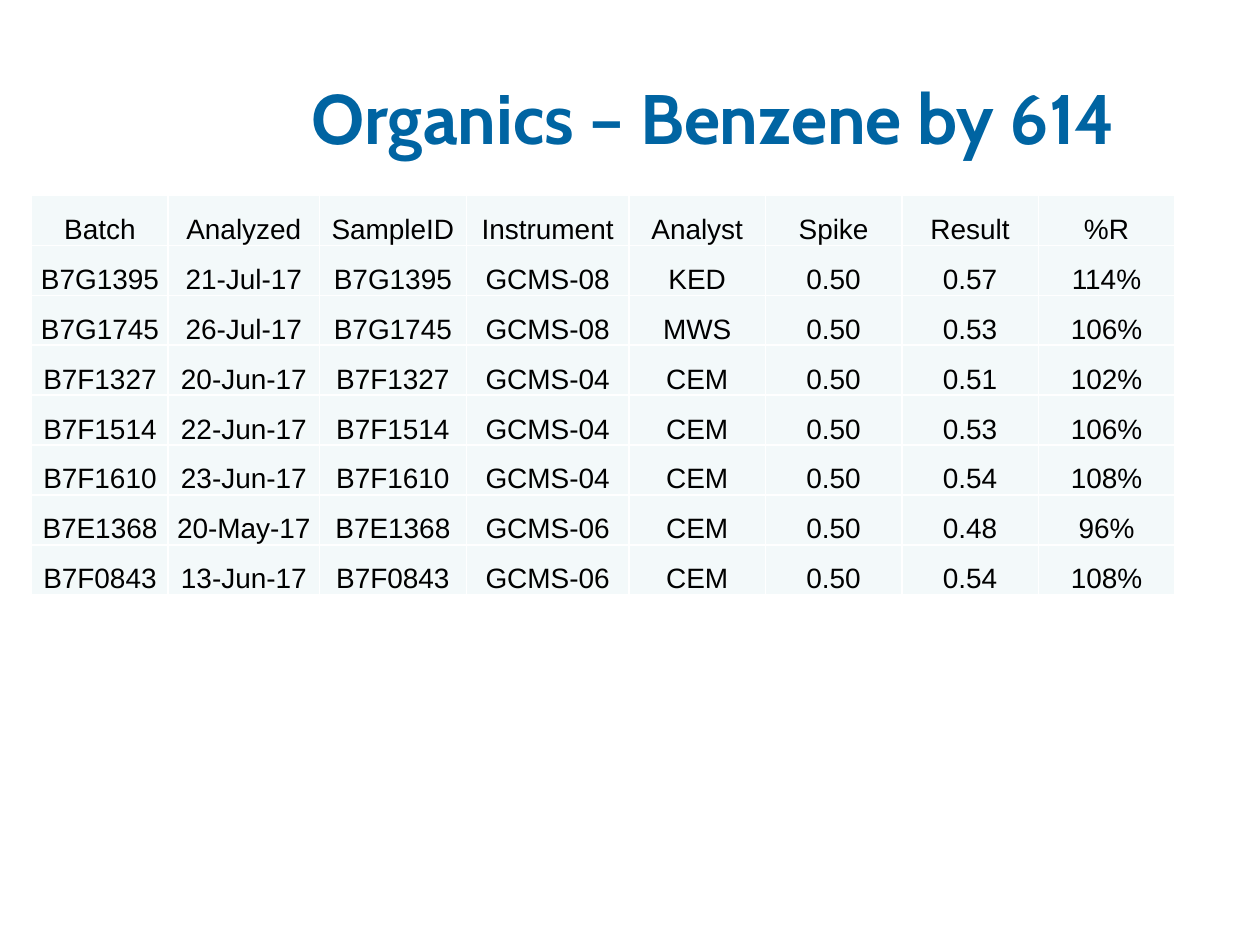
import pptx
import pptx.dml.color
import pptx.enum.text
import pptx.oxml
import pptx.oxml.ns
import pptx.util

Cm = pptx.util.Cm
Pt = pptx.util.Pt
RGBColor = pptx.dml.color.RGBColor
Align = pptx.enum.text.PP_ALIGN
Anchor = pptx.enum.text.MSO_ANCHOR

BLUE = RGBColor(0x00, 0x64, 0xA2)
BLACK = RGBColor(0x00, 0x00, 0x00)
WHITE = RGBColor(0xFF, 0xFF, 0xFF)
PALE = RGBColor(0xF3, 0xF9, 0xFA)

HEADS = ["Batch", "Analyzed", "SampleID", "Instrument",
         "Analyst", "Spike", "Result", "%R"]
WIDTHS = [2.75, 3.05, 2.96, 3.28, 2.75, 2.75, 2.75, 2.75]
SPIKE = 0.5
RUNS = [
    ("B7G1395", "21-Jul-17", "GCMS-08", "KED", 0.57),
    ("B7G1745", "26-Jul-17", "GCMS-08", "MWS", 0.53),
    ("B7F1327", "20-Jun-17", "GCMS-04", "CEM", 0.51),
    ("B7F1514", "22-Jun-17", "GCMS-04", "CEM", 0.53),
    ("B7F1610", "23-Jun-17", "GCMS-04", "CEM", 0.54),
    ("B7E1368", "20-May-17", "GCMS-06", "CEM", 0.48),
    ("B7F0843", "13-Jun-17", "GCMS-06", "CEM", 0.54),
]


def assign(target, values):
    for name, value in values.items():
        setattr(target, name, value)


def expand(batch, date, device, analyst, result):
    """Return a full table row; the sample is named after its batch."""
    return [batch, date, batch, device, analyst,
            f"{SPIKE:.2f}", f"{result:.2f}", f"{result / SPIKE:.0%}"]


class Page:
    """Holds the slide and the formats of its elements."""

    TITLE = {"name": "Cabin", "size": Pt(40), "bold": True}
    BODY = {"name": "Arial", "size": Pt(16), "bold": False}
    CELL = {"margin_left": Cm(0.02), "margin_right": Cm(0.02),
            "margin_top": Cm(0.02), "margin_bottom": 0,
            "vertical_anchor": Anchor.BOTTOM}

    def __init__(self, deck):
        self.slide = deck.slides.add_slide(deck.slide_layouts[6])

    def label(self, frame, text, font, color):
        para = frame.paragraphs[0]
        para.alignment = Align.CENTER
        run = para.add_run()
        run.text = text
        assign(run.font, font)
        run.font.color.rgb = color

    def title(self, text, left, top, width, height):
        box = self.slide.shapes.add_textbox(
            Cm(left), Cm(top), Cm(width), Cm(height))
        assign(box.text_frame,
               {"word_wrap": True, "vertical_anchor": Anchor.MIDDLE})
        self.label(box.text_frame, text, self.TITLE, BLUE)

    def border(self, cell):
        props = cell._tc.get_or_add_tcPr()
        space = pptx.oxml.ns.nsdecls("a")
        for side in "LRTB":
            props.append(pptx.oxml.parse_xml(
                f'<a:ln{side} {space} w="{Pt(1)}"><a:solidFill>'
                f'<a:srgbClr val="{WHITE}"/></a:solidFill></a:ln{side}>'))

    def table(self, rows, left, top, widths, height):
        grid = self.slide.shapes.add_table(
            len(rows), len(widths), Cm(left), Cm(top),
            Cm(sum(widths)), Cm(height)).table
        for column, width in zip(grid.columns, widths):
            column.width = Cm(width)
        for y, row in enumerate(rows):
            for x, text in enumerate(row):
                cell = grid.cell(y, x)
                assign(cell, self.CELL)
                self.border(cell)
                cell.fill.solid()
                cell.fill.fore_color.rgb = PALE
                self.label(cell.text_frame, text, self.BODY, BLACK)


def main():
    deck = pptx.Presentation()
    assign(deck, {"slide_width": Cm(25.4), "slide_height": Cm(19.05)})
    page = Page(deck)
    page.title("Organics – Benzene by 614", 4.65, 0.76, 19.48, 3.18)
    rows = [HEADS] + [expand(*run) for run in RUNS]
    page.table(rows, 0.64, 3.94, WIDTHS, 8.05)
    deck.save("out.pptx")


if __name__ == "__main__":
    main()
